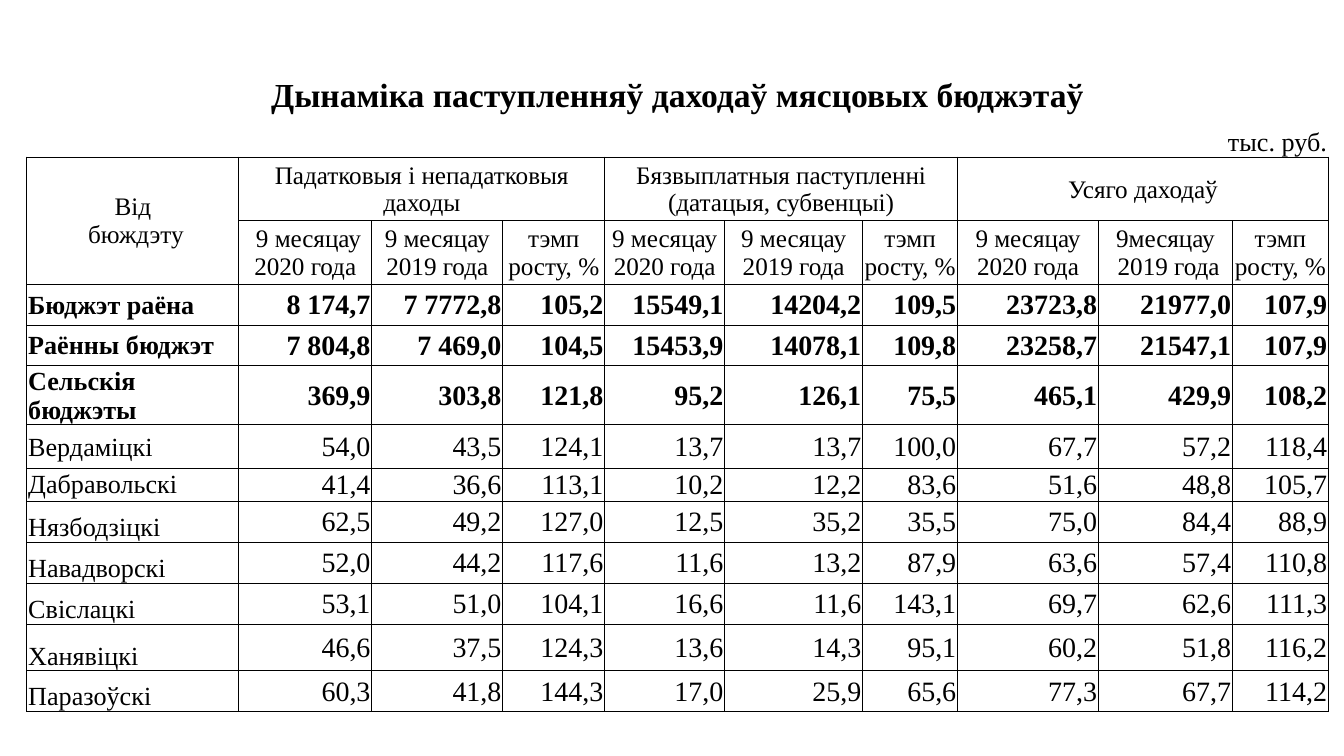
from lxml.etree import SubElement
from pptx import Presentation
from pptx.dml.color import RGBColor
from pptx.enum.text import MSO_ANCHOR, PP_ALIGN
from pptx.oxml.ns import qn
from pptx.util import Pt

COLORS = {"text": "000000", "border": "000000"}
TOP, MIDDLE, BOTTOM = MSO_ANCHOR.TOP, MSO_ANCHOR.MIDDLE, MSO_ANCHOR.BOTTOM
LEFT, CENTER, RIGHT = PP_ALIGN.LEFT, PP_ALIGN.CENTER, PP_ALIGN.RIGHT


def write_cell(cell, text, size, align, anchor=MIDDLE, bold=False):
    """Fill a cell; each line of the text becomes a paragraph."""
    cell.text = text
    cell.vertical_anchor = anchor
    font_format = {"name": "Times New Roman", "size": Pt(size), "bold": bold}
    for para in cell.text_frame.paragraphs:
        para.alignment = align
        for span in para.runs:
            for name, value in font_format.items():
                setattr(span.font, name, value)
            span.font.color.rgb = RGBColor.from_string(COLORS["text"])


def set_borders(cell, visible_sides):
    """Draw thin lines on the given sides and clear the others."""
    properties = cell._tc.get_or_add_tcPr()
    for index, side in enumerate("LRTB"):
        line = SubElement(properties, qn(f"a:ln{side}"), w=str(Pt(0.5)))
        if side in visible_sides:
            fill = SubElement(line, qn("a:solidFill"))
            SubElement(fill, qn("a:srgbClr"), val=COLORS["border"])
        else:
            SubElement(line, qn("a:noFill"))
        properties.insert(index, line)


deck = Presentation()
deck.slide_width, deck.slide_height = Pt(720), Pt(405)
page = deck.slides.add_slide(deck.slide_layouts[6])

# Table contents
groups = [
    "Падатковыя і непадатковыя даходы",
    "Бязвыплатныя паступленні (датацыя, субвенцыі)",
    "Усяго даходаў",
]
growth = "тэмп\nросту, %"
periods = [
    " 9 месяцау 2020 года", "9 месяцау 2019 года", growth,
    "9 месяцау\n2020 года", "9 месяцау 2019 года", growth,
    "9 месяцау 2020 года", "9месяцау\n 2019 года", growth,
]
# Budget, name anchor, number anchor, bold, values
budgets = [
    ("Бюджэт раёна", MIDDLE, MIDDLE, True,
     "8 174,7|7 7772,8|105,2|15549,1|14204,2|109,5|23723,8|21977,0|107,9"),
    ("Раённы бюджэт", MIDDLE, MIDDLE, True,
     "7 804,8|7 469,0|104,5|15453,9|14078,1|109,8|23258,7|21547,1|107,9"),
    ("Сельскія бюджэты", MIDDLE, MIDDLE, True,
     "369,9|303,8|121,8|95,2|126,1|75,5|465,1|429,9|108,2"),
    ("Вердаміцкі", MIDDLE, MIDDLE, False,
     "54,0|43,5|124,1|13,7|13,7|100,0|67,7|57,2|118,4"),
    ("Дабравольскі", TOP, TOP, False,
     "41,4|36,6|113,1|10,2|12,2|83,6|51,6|48,8|105,7"),
    ("Нязбодзіцкі", BOTTOM, MIDDLE, False,
     "62,5|49,2|127,0|12,5|35,2|35,5|75,0|84,4|88,9"),
    ("Навадворскі", BOTTOM, MIDDLE, False,
     "52,0|44,2|117,6|11,6|13,2|87,9|63,6|57,4|110,8"),
    ("Свіслацкі", BOTTOM, MIDDLE, False,
     "53,1|51,0|104,1|16,6|11,6|143,1|69,7|62,6|111,3"),
    ("Ханявіцкі", BOTTOM, MIDDLE, False,
     "46,6|37,5|124,3|13,6|14,3|95,1|60,2|51,8|116,2"),
    ("Паразоўскі", BOTTOM, MIDDLE, False,
     "60,3|41,8|144,3|17,0|25,9|65,6|77,3|67,7|114,2"),
]

# Grid
widths = [113.5, 71.3, 60.2, 10, 54.6, 64.3, 15.3, 58.6, 50.9, 75.5, 61.2, 10.6, 51.4]
heights = [23, 23, 34, 34, 22, 21.7, 31.6, 23.6, 17.2, 22, 22, 22, 25, 21.6]
frame = page.shapes.add_table(len(heights), len(widths), Pt(14.4), Pt(38.2),
                              Pt(sum(widths)), Pt(sum(heights)))
table = frame.table
table.first_row = table.horz_banding = False
for column, width in zip(table.columns, widths):
    column.width = Pt(width)
for row, height in zip(table.rows, heights):
    row.height = Pt(height)

# Cell margins, fills and borders
margins = {"margin_left": Pt(0.72), "margin_right": Pt(0.72),
           "margin_top": Pt(0.72), "margin_bottom": Pt(0)}
sides_by_row = ["", "B"] + ["LRTB"] * (len(heights) - 2)
for row, sides in zip(table.rows, sides_by_row):
    for cell in row.cells:
        for name, value in margins.items():
            setattr(cell, name, value)
        cell.fill.background()
        set_borders(cell, sides)

# Merged cells: (row, first column, last row, last column)
merges = [(0, 0, 0, 12), (1, 1, 1, 2), (1, 3, 1, 6), (1, 7, 1, 8),
          (1, 11, 1, 12), (2, 0, 3, 0)]
merges += [(2, first, 2, first + 3) for first in (1, 5, 9)]
merges += [(row, first, row, first + 1)
           for row in range(3, len(heights)) for first in (2, 6, 10)]
for top, first, bottom, last in merges:
    table.cell(top, first).merge(table.cell(bottom, last))

# Title, unit and headings
write_cell(table.cell(0, 0), "Дынаміка паступленняў даходаў мясцовых бюджэтаў",
           18, CENTER, BOTTOM, True)
write_cell(table.cell(1, 11), "тыс. руб.", 14, RIGHT, BOTTOM)
write_cell(table.cell(2, 0), "Вiд\n бюждэту", 13.5, CENTER)
for first, group in zip((1, 5, 9), groups):
    write_cell(table.cell(2, first), group, 13.5, CENTER)
value_columns = [1, 2, 4, 5, 6, 8, 9, 10, 12]
for column, period in zip(value_columns, periods):
    write_cell(table.cell(3, column), period, 13.5, CENTER)

# Budget rows
for row, (budget, name_anchor, number_anchor, bold, values) in enumerate(budgets, 4):
    write_cell(table.cell(row, 0), budget, 14, LEFT, name_anchor, bold)
    for column, value in zip(value_columns, values.split("|")):
        write_cell(table.cell(row, column), value, 15, RIGHT, number_anchor, bold)

deck.save("out.pptx")
